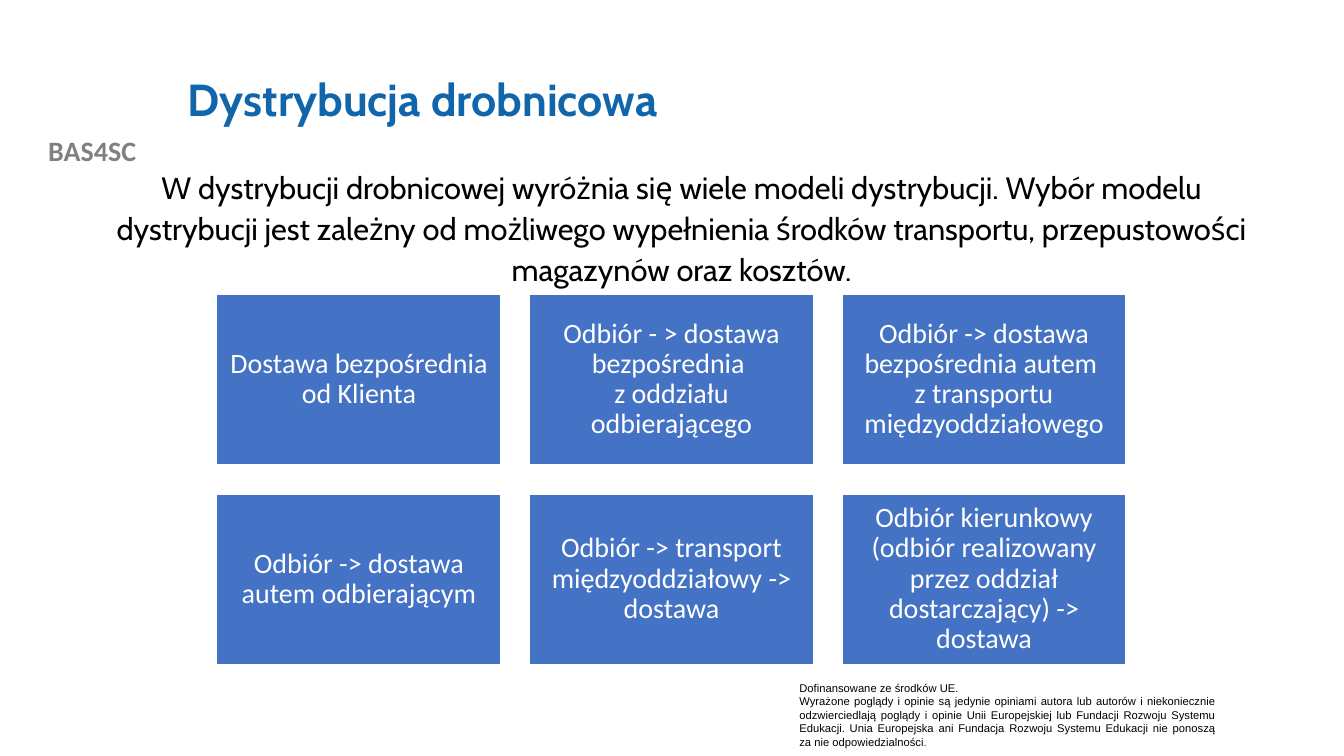
from lxml.etree import SubElement
from pptx import Presentation
from pptx.dml.color import RGBColor
from pptx.enum.shapes import MSO_SHAPE
from pptx.enum.text import MSO_ANCHOR, MSO_AUTO_SIZE, PP_ALIGN
from pptx.oxml.ns import qn
from pptx.util import Inches, Pt

MODELS = [
    "Dostawa bezpośrednia od Klienta",
    "Odbiór - > dostawa bezpośrednia \nz oddziału odbierającego",
    "Odbiór -> dostawa bezpośrednia autem \nz transportu międzyoddziałowego",
    "Odbiór -> dostawa autem odbierającym",
    "Odbiór -> transport międzyoddziałowy -> dostawa",
    "Odbiór kierunkowy (odbiór realizowany przez oddział dostarczający) -> dostawa",
]
INTRO = (
    "W dystrybucji drobnicowej wyróżnia się wiele modeli dystrybucji. Wybór modelu "
    "dystrybucji jest zależny od możliwego wypełnienia środków transportu, "
    "przepustowości magazynów oraz kosztów."
)
DISCLAIMER = [
    "Dofinansowane ze środków UE.",
    "Wyrażone poglądy i opinie są jedynie opiniami autora lub autorów i niekoniecznie "
    "odzwierciedlają poglądy i opinie Unii Europejskiej lub Fundacji Rozwoju Systemu "
    "Edukacji. Unia Europejska ani Fundacja Rozwoju Systemu Edukacji nie ponoszą za "
    "nie odpowiedzialności",
]


def rgb(value):
    return RGBColor.from_string(value)


class SlideBuilder:
    BLUE, BOX, GREY, BLACK, WHITE = "1065AB", "4472C4", "808080", "000000", "FFFFFF"
    HEADING, BODY, SMALL = "Cabin", "Calibri", "Arial"

    def __init__(self, prs):
        self.s = prs.slides.add_slide(prs.slide_layouts[1])

    def place(self, sp, left, top, width, height):
        sp.left, sp.top = Inches(left), Inches(top)
        sp.width, sp.height = Inches(width), Inches(height)

    def style_run(self, r, font, size, color, bold=False):
        r.font.name, r.font.size, r.font.bold = font, Pt(size), bold
        r.font.color.rgb = rgb(color)

    def fill_text(self, sp, paragraphs, font, size, color, align, bold=False, spacing=1.0):
        tf = sp.text_frame
        for i, text in enumerate(paragraphs):
            p = tf.add_paragraph() if i else tf.paragraphs[0]
            p.text = text
            p.alignment, p.line_spacing = align, spacing
            p.space_before = Pt(0)
            for r in p.runs:
                self.style_run(r, font, size, color, bold)
        tf.word_wrap, tf.auto_size = True, MSO_AUTO_SIZE.NONE
        return tf

    def title(self, text, *box):
        sp = self.s.shapes.title
        self.place(sp, *box)
        tf = self.fill_text(sp, [text], self.HEADING, 32, self.BLUE, PP_ALIGN.LEFT, True, 0.9)
        tf.vertical_anchor = MSO_ANCHOR.MIDDLE

    def body(self, text, *box):
        sp = self.s.placeholders[1]
        self.place(sp, *box)
        tf = self.fill_text(sp, [text], self.HEADING, 22, self.BLACK, PP_ALIGN.CENTER, spacing=1.1)
        pPr = tf.paragraphs[0]._p.get_or_add_pPr()
        pPr.set("marL", "0")
        pPr.set("indent", "0")
        SubElement(pPr, qn("a:buNone"))

    def text(self, paragraphs, box, *style, **options):
        sp = self.s.shapes.add_textbox(*map(Inches, box))
        return self.fill_text(sp, paragraphs, *style, **options)

    def card(self, text, *box):
        sp = self.s.shapes.add_shape(MSO_SHAPE.RECTANGLE, *map(Inches, box))
        sp.shadow.inherit = False
        sp.fill.solid()
        sp.fill.fore_color.rgb = rgb(self.BOX)
        sp.line.color.rgb = rgb(self.WHITE)
        sp.line.width = Pt(1)
        tf = self.fill_text(sp, [text], self.BODY, 20, self.WHITE, PP_ALIGN.CENTER, spacing=0.9)
        tf.vertical_anchor = MSO_ANCHOR.MIDDLE
        tf.margin_left = tf.margin_right = tf.margin_top = tf.margin_bottom = Inches(0.08)


def main():
    prs = Presentation()
    prs.slide_width, prs.slide_height = Inches(13.33), Inches(7.5)
    b = SlideBuilder(prs)

    b.text(["BAS4SC"], (0, 1.28, 1.83, 0.44), b.BODY, 20, b.GREY, PP_ALIGN.CENTER, bold=True)
    tf = b.text(DISCLAIMER, (7.83, 6.71, 4.33, 0.77), b.SMALL, 8, b.BLACK, PP_ALIGN.JUSTIFY)
    full_stop = tf.paragraphs[-1].add_run()
    full_stop.text = "."
    b.style_run(full_stop, b.SMALL, 7, b.BLACK)

    b.title("Dystrybucja drobnicowa", 1.76, 0.4, 10.66, 1.22)
    b.body(INTRO, 1.01, 1.59, 11.5, 1.33)
    for i, model in enumerate(MODELS):
        row, col = divmod(i, 3)
        b.card(model, 2.15 + col * 3.1, 2.92 + row * 1.98, 2.82, 1.69)

    prs.save("out.pptx")


if __name__ == "__main__":
    main()
